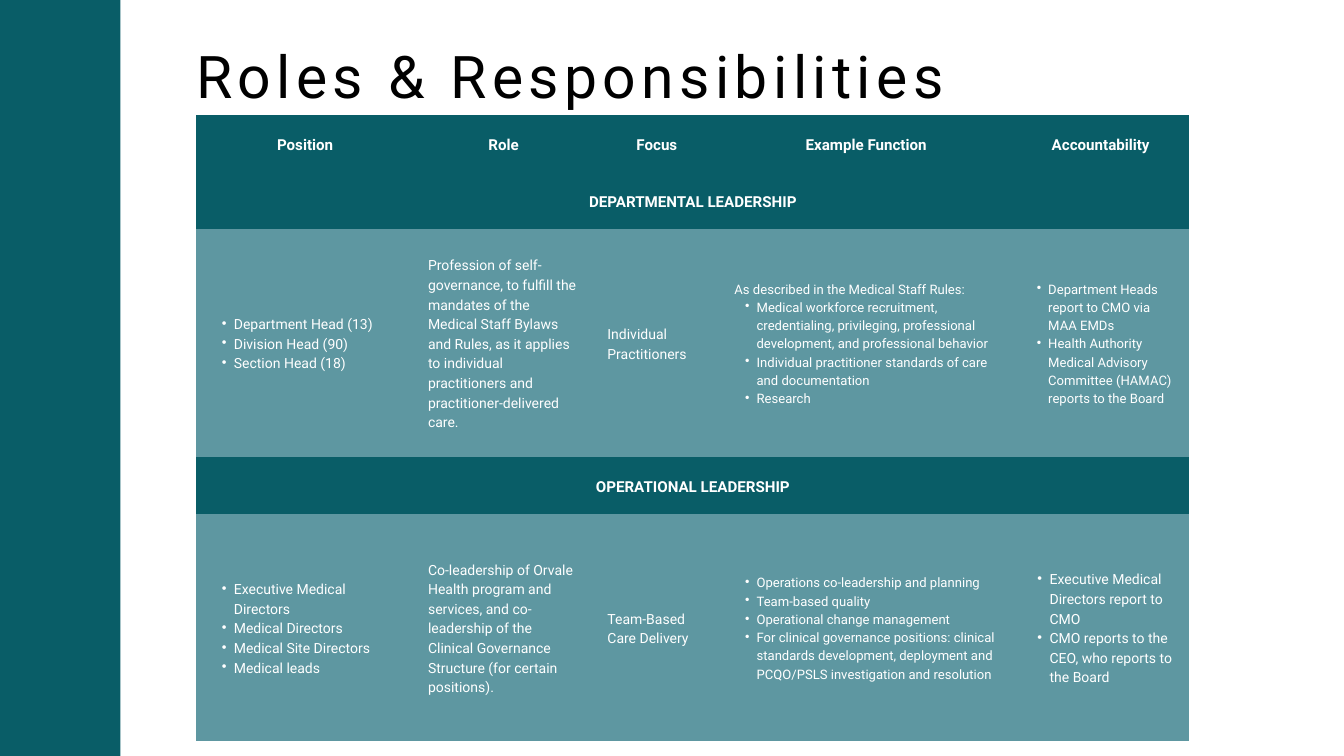
from lxml import etree
from pptx import Presentation
from pptx.dml.color import RGBColor
from pptx.enum.shapes import MSO_SHAPE
from pptx.enum.text import MSO_ANCHOR, MSO_AUTO_SIZE, PP_ALIGN
from pptx.oxml.ns import qn
from pptx.util import Inches, Pt

RECTANGLE = MSO_SHAPE.RECTANGLE
MIDDLE, TOP = MSO_ANCHOR.MIDDLE, MSO_ANCHOR.TOP
CENTER, LEFT = PP_ALIGN.CENTER, PP_ALIGN.LEFT
FIT_SHAPE = MSO_AUTO_SIZE.SHAPE_TO_FIT_TEXT

FONT = "Roboto"
DARK, LIGHT, WHITE, BLACK = "095D67", "5E97A1", "FFFFFF", "000000"
NO_STYLE_NO_GRID = "{2D5ABB26-0587-4C30-8999-92F81FD0307C}"
LINE_HEIGHT = {16.2: 22.8, 15: 21, 14: 19.6}
BULLET_INDENT = {15: (0.35, 0.18), 14: (0.33, 0.17)}

COLUMN_WIDTHS = [3.24, 2.67, 1.89, 4.34, 2.64]
ROW_HEIGHTS = [0.85, 0.85, 3.39, 0.85, 3.38]
HEADERS = ["Position", "Role", "Focus", "Example Function", "Accountability"]
SECTIONS = {1: "DEPARTMENTAL LEADERSHIP", 3: "OPERATIONAL LEADERSHIP"}

# Each cell is a text size and its paragraphs; a leading "•" marks a bullet.
BODY = {
    2: [
        (15, ["•Department Head (13)", "•Division Head (90)", "•Section Head (18)"]),
        (15, ["Profession of self-governance, to fulfill the mandates of the Medical "
              "Staff Bylaws and Rules, as it applies to individual practitioners and "
              "practitioner-delivered care."]),
        (15, ["Individual Practitioners"]),
        (14, ["As described in the Medical Staff Rules:",
              "•Medical workforce recruitment, credentialing, privileging, professional "
              "development, and professional behavior",
              "•Individual practitioner standards of care and documentation",
              "•Research"]),
        (14, ["•Department Heads report to CMO via MAA EMDs",
              "•Health Authority Medical Advisory Committee (HAMAC) reports to the Board"]),
    ],
    4: [
        (15, ["•Executive Medical Directors", "•Medical Directors",
              "•Medical Site Directors", "•Medical leads"]),
        (15, ["Co-leadership of Orvale Health program and services, and co-leadership "
              "of the Clinical Governance Structure (for certain positions)."]),
        (15, ["Team-Based Care Delivery"]),
        (14, ["•Operations co-leadership and planning", "•Team-based quality",
              "•Operational change management",
              "•For clinical governance positions: clinical standards development, "
              "deployment and PCQO/PSLS investigation and resolution"]),
        (15, ["•Executive Medical Directors report to CMO",
              "•CMO reports to the CEO, who reports to the Board"]),
    ],
}


def color(value):
    return RGBColor.from_string(value)


def fill_cell(cell, fill, size, texts, heading=False):
    cell.fill.solid()
    cell.fill.fore_color.rgb = color(fill)
    cell.vertical_anchor = MIDDLE
    cell.margin_left = cell.margin_right = Inches(0.21)
    cell.margin_top = cell.margin_bottom = Inches(0.21)
    for index, text in enumerate(texts):
        frame = cell.text_frame
        para = frame.add_paragraph() if index else frame.paragraphs[0]
        if text.startswith("•"):
            margin, hanging = BULLET_INDENT[size]
            para.level = 1
            properties = para._p.get_or_add_pPr()
            properties.set("marL", str(Inches(margin)))
            properties.set("indent", str(-Inches(hanging)))
            etree.SubElement(properties, qn("a:buChar")).set("char", "•")
        para.alignment = CENTER if heading else LEFT
        para.line_spacing = Pt(LINE_HEIGHT[size])
        span = para.add_run()
        span.text = text.removeprefix("•")
        span.font.name = FONT
        span.font.size = Pt(size)
        span.font.bold = heading
        span.font.color.rgb = color(WHITE)


deck = Presentation()
deck.slide_width, deck.slide_height = Inches(20), Inches(11.25)
page = deck.slides.add_slide(deck.slide_layouts[5])

# Side band
band = page.shapes.add_shape(RECTANGLE, 0, 0, Inches(1.79), deck.slide_height)
band.shadow.inherit = False
band.fill.solid()
band.fill.fore_color.rgb = color(DARK)
band.line.fill.background()

# Title
title = page.shapes.title
title.left, title.top = Inches(2.92), Inches(0.41)
title.width, title.height = Inches(13.72), Inches(1.18)
frame = title.text_frame
frame.margin_left = frame.margin_right = frame.margin_top = frame.margin_bottom = 0
frame.word_wrap = True
frame.auto_size = FIT_SHAPE
frame.vertical_anchor = TOP
para = frame.paragraphs[0]
para.alignment = LEFT
para.line_spacing = Pt(88.2)
span = para.add_run()
span.text = "Roles & Responsibilities"
span.font.name = FONT
span.font.size = Pt(63)
span.font.color.rgb = color(BLACK)
span._r.get_or_add_rPr().set("spc", "580")

# Table
table_frame = page.shapes.add_table(
    len(ROW_HEIGHTS), len(COLUMN_WIDTHS), Inches(2.92), Inches(1.71),
    Inches(sum(COLUMN_WIDTHS)), Inches(sum(ROW_HEIGHTS)))
table = table_frame.table
table.first_row = table.horz_banding = False
table._tbl.tblPr.find(qn("a:tableStyleId")).text = NO_STYLE_NO_GRID
for column, width in zip(table.columns, COLUMN_WIDTHS):
    column.width = Inches(width)
for row, height in zip(table.rows, ROW_HEIGHTS):
    row.height = Inches(height)

for column, header in enumerate(HEADERS):
    fill_cell(table.cell(0, column), DARK, 16.2, [header], heading=True)
for row, section in SECTIONS.items():
    table.cell(row, 0).merge(table.cell(row, len(COLUMN_WIDTHS) - 1))
    fill_cell(table.cell(row, 0), DARK, 16.2, [section], heading=True)
for row, cells in BODY.items():
    for column, (size, texts) in enumerate(cells):
        fill_cell(table.cell(row, column), LIGHT, size, texts)

deck.save("out.pptx")
